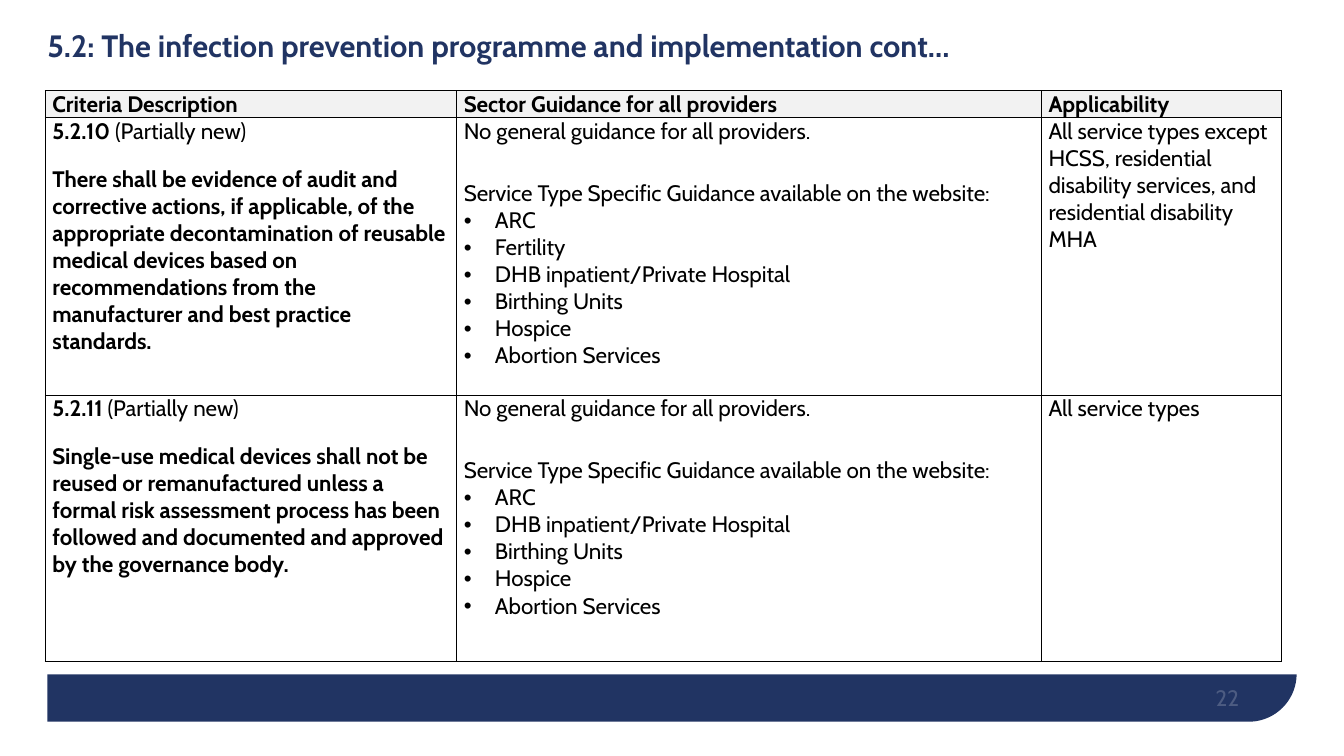
import pptx
import pptx.util
import pptx.dml.color
import pptx.enum.shapes
import pptx.enum.text
import pptx.oxml
import pptx.oxml.ns
from pptx.util import Inches

TITLE = "5.2: The infection prevention programme and implementation cont…"
PAGE_NUMBER = "22"
HEADINGS = ["Criteria Description", "Sector Guidance for all providers", "Applicability"]
GENERAL = "No general guidance for all providers."
SPECIFIC = "Service Type Specific Guidance available on the website:"
CRITERIA = [
    {
        "number": "5.2.10 ",
        "status": "(Partially new)",
        "text": "There shall be evidence of audit and corrective actions, if applicable, "
                "of the appropriate decontamination of reusable medical devices based on "
                "recommendations from the manufacturer and best practice standards.",
        "services": ["ARC", "Fertility", "DHB inpatient/Private Hospital",
                     "Birthing Units", "Hospice", "Abortion Services"],
        "applies": "All service types except HCSS, residential disability services, "
                   "and residential disability MHA",
    },
    {
        "number": "5.2.11 ",
        "status": "(Partially new)",
        "text": "Single-use medical devices shall not be reused or remanufactured unless "
                "a formal risk assessment process has been followed and documented and "
                "approved by the governance body.",
        "services": ["ARC", "DHB inpatient/Private Hospital",
                     "Birthing Units", "Hospice", "Abortion Services"],
        "applies": "All service types",
    },
]
COLORS = {"navy": "213463", "white": "FFFFFF", "black": "000000", "header": "F2F2F2"}
FONT = "Cabin"
COLUMN_WIDTHS = [4.08, 5.8, 2.38]
ROW_HEIGHTS = [0.27, 2.75, 2.64]
BULLET_INDENT = Inches(0.31)


def color(name):
    return pptx.dml.color.RGBColor.from_string(COLORS[name])


def add_span(para, text, size=16, bold=False, ink="black"):
    span = para.add_run()
    span.text = text
    span.font.name = FONT
    span.font.size = pptx.util.Pt(size)
    span.font.bold = bold
    span.font.color.rgb = color(ink)
    return span


def add_panel(page, kind, left, top, width, height, fill):
    panel = page.shapes.add_shape(kind, Inches(left), Inches(top), Inches(width), Inches(height))
    panel.shadow.inherit = False
    panel.fill.solid()
    panel.fill.fore_color.rgb = color(fill)
    panel.line.fill.background()
    return panel


def add_borders(cell):
    properties = cell._tc.get_or_add_tcPr()
    for position, side in enumerate(("lnL", "lnR", "lnT", "lnB")):
        properties.insert(position, pptx.oxml.parse_xml(
            f'<a:{side} {pptx.oxml.ns.nsdecls("a")} w="12700"><a:solidFill>'
            f'<a:srgbClr val="{COLORS["black"]}"/></a:solidFill></a:{side}>'))


def add_bullet(para):
    properties = para._p.get_or_add_pPr()
    properties.set("marL", str(BULLET_INDENT))
    properties.set("indent", str(-BULLET_INDENT))
    properties.append(pptx.oxml.parse_xml(
        f'<a:buFont {pptx.oxml.ns.nsdecls("a")} typeface="Arial"/>'))
    properties.append(pptx.oxml.parse_xml(
        f'<a:buChar {pptx.oxml.ns.nsdecls("a")} char="•"/>'))


def fill_description(frame, criterion):
    para = frame.paragraphs[0]
    para.space_after = pptx.util.Pt(9)
    add_span(para, criterion["number"], bold=True)
    add_span(para, criterion["status"])
    para = frame.add_paragraph()
    para.space_before = pptx.util.Pt(6)
    add_span(para, criterion["text"], bold=True)


def fill_guidance(frame, criterion):
    para = frame.paragraphs[0]
    para.space_after = pptx.util.Pt(25)
    add_span(para, GENERAL)
    add_span(frame.add_paragraph(), SPECIFIC)
    for service in criterion["services"]:
        para = frame.add_paragraph()
        add_bullet(para)
        add_span(para, service)


def main():
    deck = pptx.Presentation()
    deck.slide_width, deck.slide_height = Inches(13.33), Inches(7.5)
    page = deck.slides.add_slide(deck.slide_layouts[5])
    kinds = pptx.enum.shapes.MSO_SHAPE
    anchors = pptx.enum.text.MSO_ANCHOR
    aligns = pptx.enum.text.PP_ALIGN

    # Navy footer with its rounded corner at the lower right, under a white panel
    footer = add_panel(page, kinds.ROUND_1_RECTANGLE, 0.47, 0.37, 12.39, 6.79, "navy")
    footer.adjustments[0] = 0.07
    footer.rotation = 180
    footer._element.spPr.xfrm.set("flipH", "1")
    add_panel(page, kinds.RECTANGLE, 0, 0, 13.33, 6.69, "white")

    # Faint page number
    box = page.shapes.add_textbox(Inches(9.29), Inches(6.65), Inches(3), Inches(0.4))
    frame = box.text_frame
    frame.word_wrap = True
    frame.vertical_anchor = anchors.BOTTOM
    frame.margin_left = frame.margin_right = frame.margin_top = frame.margin_bottom = 0
    frame.paragraphs[0].alignment = aligns.RIGHT
    number = add_span(frame.paragraphs[0], PAGE_NUMBER, ink="white")
    ink = number._r.find(".//" + pptx.oxml.ns.qn("a:srgbClr"))
    ink.append(pptx.oxml.parse_xml(f'<a:alpha {pptx.oxml.ns.nsdecls("a")} val="20000"/>'))

    # Title, brought in front of the white panel
    title = page.shapes.title
    page.shapes._spTree.append(title._element)
    title.left, title.top = Inches(0.37), Inches(0)
    title.width, title.height = Inches(10.94), Inches(0.95)
    title.text_frame.vertical_anchor = anchors.MIDDLE
    title.text_frame.auto_size = pptx.enum.text.MSO_AUTO_SIZE.NONE
    para = title.text_frame.paragraphs[0]
    para.alignment = aligns.LEFT
    para.line_spacing = 0.9
    add_span(para, TITLE, size=22, bold=True, ink="navy")

    # Criteria table
    table = page.shapes.add_table(
        len(ROW_HEIGHTS), len(COLUMN_WIDTHS), Inches(0.45), Inches(0.9),
        Inches(sum(COLUMN_WIDTHS)), Inches(sum(ROW_HEIGHTS))).table
    table.horz_banding = False
    for column, width in zip(table.columns, COLUMN_WIDTHS):
        column.width = Inches(width)
    for row, height in zip(table.rows, ROW_HEIGHTS):
        row.height = Inches(height)
    for cell in table.iter_cells():
        cell.margin_left = cell.margin_right = Inches(0.07)
        cell.margin_top = cell.margin_bottom = 0
        cell.fill.background()
        add_borders(cell)

    for column, heading in enumerate(HEADINGS):
        cell = table.cell(0, column)
        cell.vertical_anchor = anchors.MIDDLE
        cell.fill.solid()
        cell.fill.fore_color.rgb = color("header")
        add_span(cell.text_frame.paragraphs[0], heading, bold=True)
    for row, criterion in enumerate(CRITERIA, start=1):
        fill_description(table.cell(row, 0).text_frame, criterion)
        fill_guidance(table.cell(row, 1).text_frame, criterion)
        add_span(table.cell(row, 2).text_frame.paragraphs[0], criterion["applies"])

    deck.save("out.pptx")


if __name__ == "__main__":
    main()
